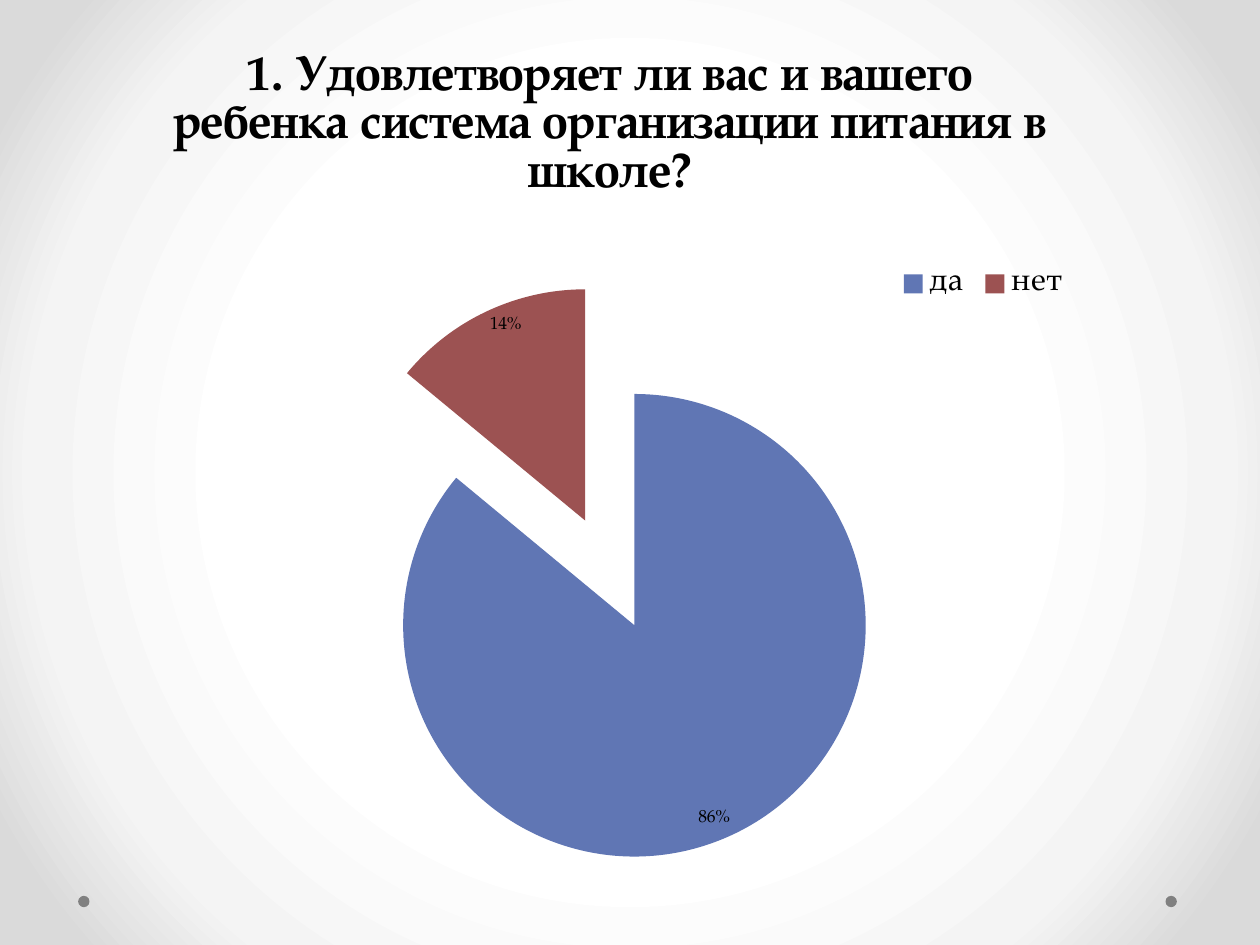
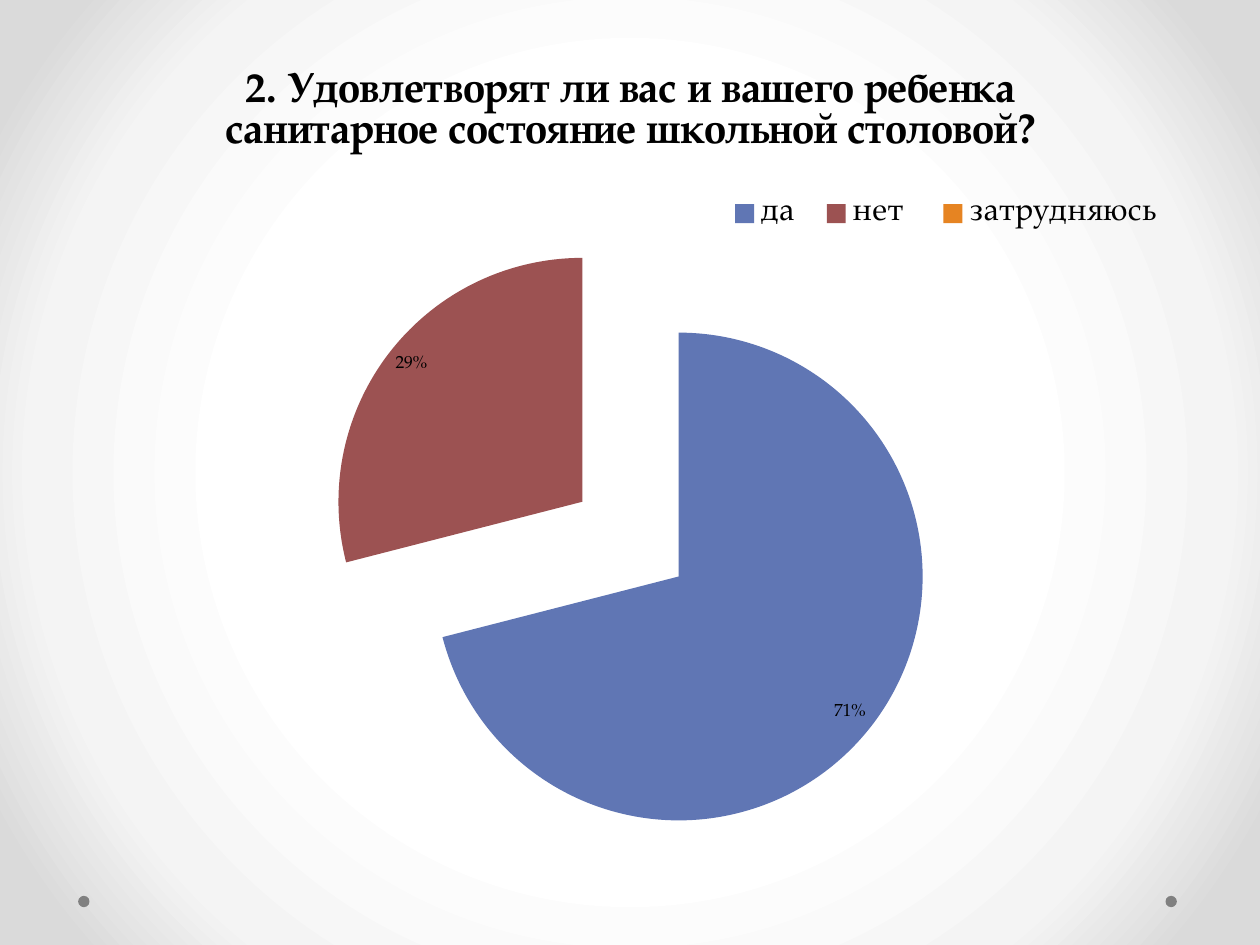
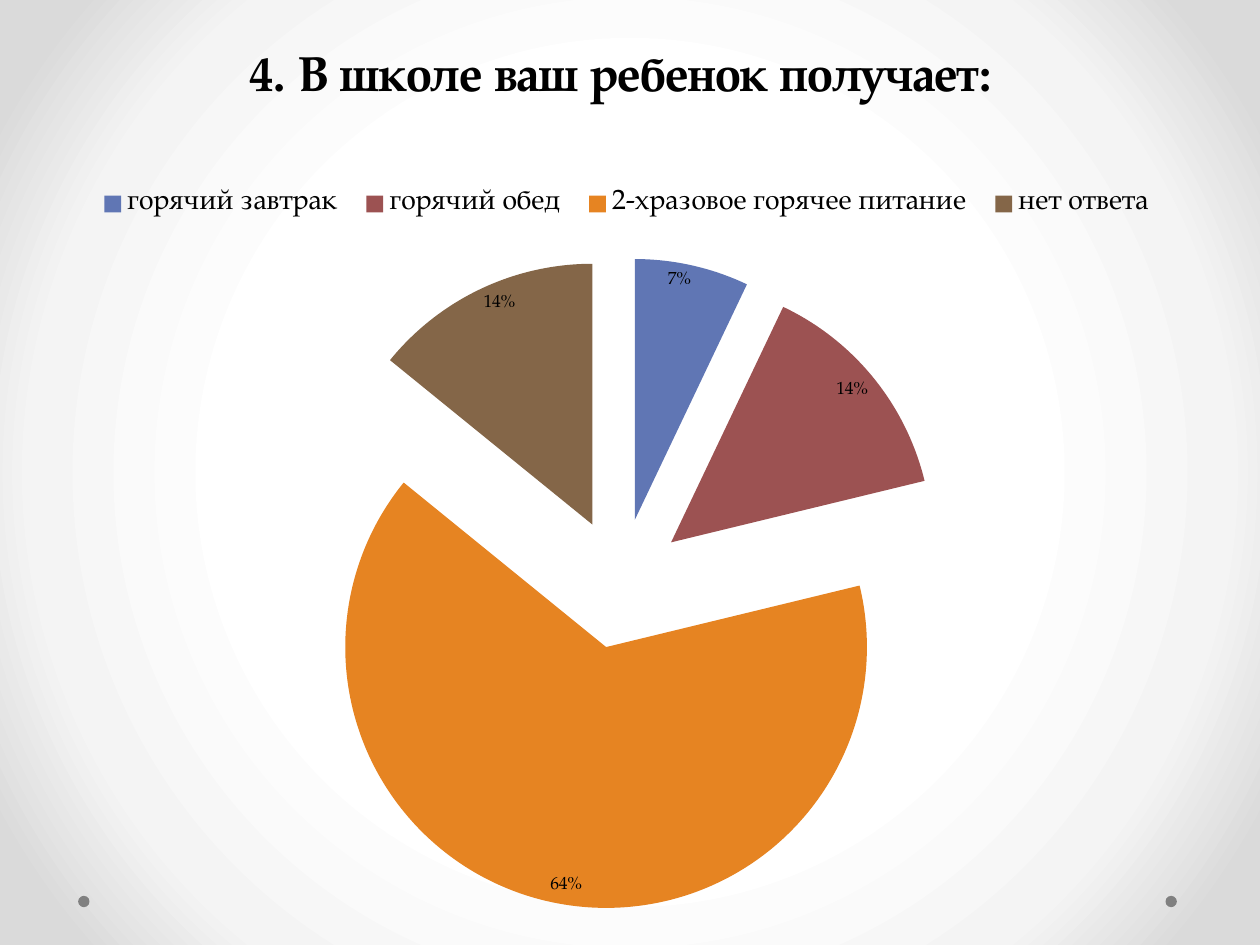
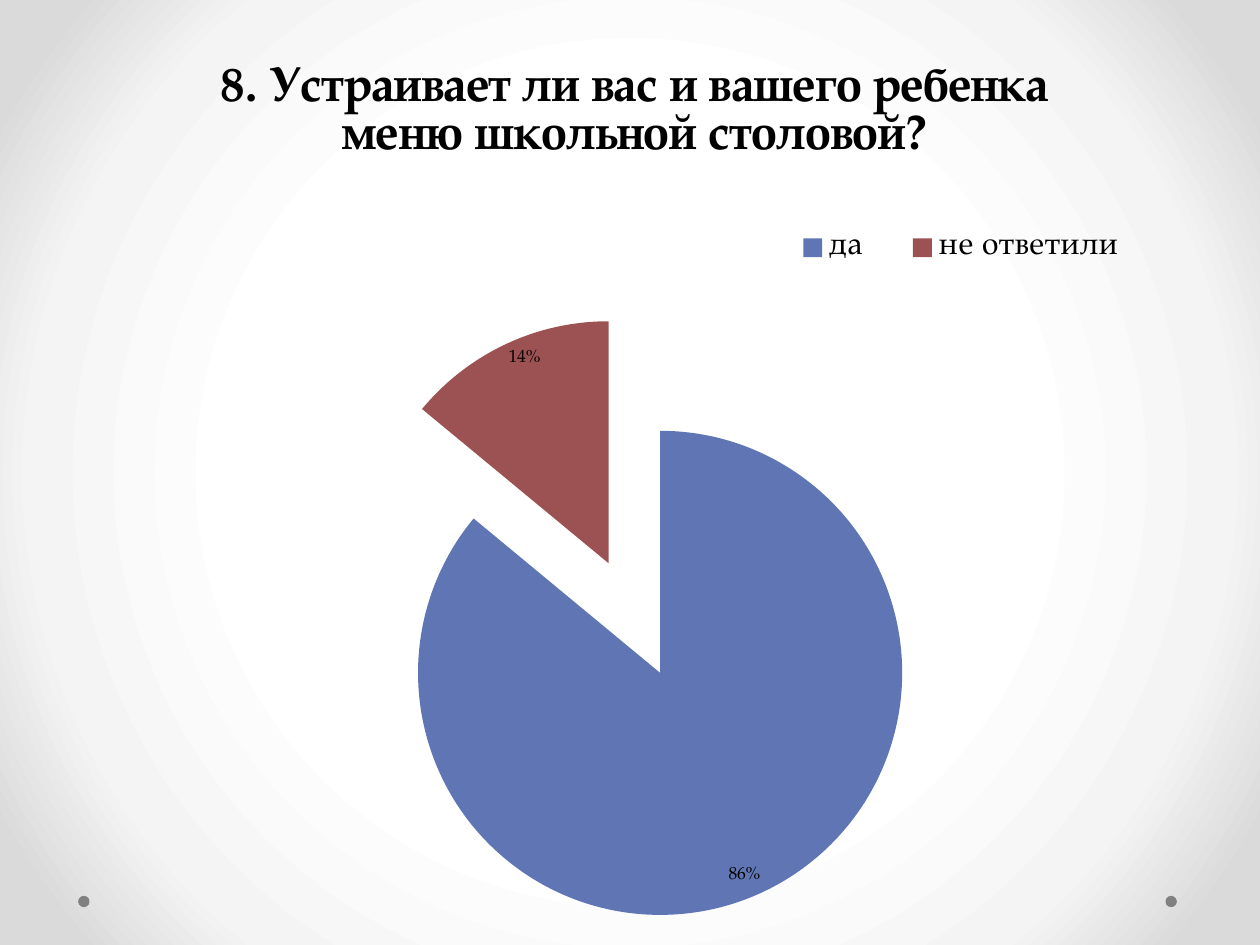
import pptx
import pptx.chart.data
import pptx.dml.color
import pptx.enum.chart
import pptx.enum.shapes
import pptx.oxml
import pptx.oxml.ns
import pptx.util

FONT = "TeX Gyre Pagella"
COLUMNS, ROWS = 100, 75
BLACK, DOT_GREY = "000000", "808080"
ANSWER_COLORS = ["6076B4", "9C5252", "E68422", "846648"]
BACKDROP_STOPS = [(50, "FFFFFF"), (76, "F4F4F4"), (92, "DADADA")]
DOT_COLUMNS, DOT_ROW, DOT_SIZE = (92.5, 6.2), 71.1, 0.9

SURVEY = [
    dict(question="1. Удовлетворяет ли вас и вашего ребенка система организации питания в школе?",
         answers={"да": 86, "нет": 14},
         frame=(3.5, 1.3, 89.8, 68.5),
         legend_area=(0.75, 0.28, 0.16, 0.06), pie_area=(0.08, 0.31, 0.84, 0.67)),
    dict(question="2. Удовлетворят ли вас и вашего ребенка санитарное состояние школьной столовой?",
         answers={"да": 71, "нет ": 29, "затрудняюсь": 0},
         frame=(2.8, 2.9, 94.5, 65.4), title_size=24,
         legend_area=(0.57, 0.18, 0.39, 0.07), pie_area=(0.08, 0.24, 0.84, 0.74)),
    dict(question="4. В школе ваш ребенок получает:",
         answers={"горячий завтрак": 7, "горячий обед": 14,
                  "2-хразовое горячее питание": 64, "нет ответа": 14},
         frame=(2, 1.3, 94.5, 70.9), legend_size=16,
         legend_area=(0.05, 0.18, 0.91, 0.06), pie_area=(0.08, 0.27, 0.84, 0.73)),
    dict(question="8. Устраивает ли вас и вашего ребенка меню школьной столовой?",
         answers={"да": 86, "не ответили ": 14},
         frame=(3.5, 2.1, 93.7, 71.7), series_name="Series 1",
         legend_area=(0.61, 0.21, 0.34, 0.07), pie_area=(0.08, 0.32, 0.84, 0.67)),
]


def color(hex_code):
    return pptx.dml.color.RGBColor.from_string(hex_code)


def grid(*cells):
    return [pptx.util.Inches(cell / 10) for cell in cells]


def format_font(font, size, bold=False, hex_code=BLACK):
    font.name = FONT
    font.size = pptx.util.Pt(size)
    font.bold = bold
    font.color.rgb = color(hex_code)


def write_text(frame, text, **font_format):
    frame.text = text
    format_font(frame.paragraphs[0].runs[0].font, **font_format)


def paint_backdrop(master):
    fill = master.background.fill
    fill.solid()
    stops = "".join(
        f'<a:gs pos="{share * 1000}"><a:srgbClr val="{hex_code}"/></a:gs>'
        for share, hex_code in BACKDROP_STOPS)
    gradient = pptx.oxml.parse_xml(
        f'<a:gradFill {pptx.oxml.ns.nsdecls("a")} rotWithShape="1"><a:gsLst>{stops}</a:gsLst>'
        '<a:path path="circle"><a:fillToRect l="50000" t="50000" r="50000" b="50000"/></a:path>'
        '</a:gradFill>')
    solid = master.element.find(".//" + pptx.oxml.ns.qn("p:bgPr")).find(
        pptx.oxml.ns.qn("a:solidFill"))
    solid.getparent().replace(solid, gradient)


def add_corner_dots(slide):
    for column in DOT_COLUMNS:
        dot = slide.shapes.add_shape(pptx.enum.shapes.MSO_SHAPE.OVAL,
                                     *grid(column, DOT_ROW, DOT_SIZE, DOT_SIZE))
        dot.shadow.inherit = False
        dot.fill.solid()
        dot.fill.fore_color.rgb = color(DOT_GREY)
        dot.line.fill.background()


def manual_layout(area, target=""):
    modes = '<c:xMode val="edge"/><c:yMode val="edge"/>'
    sizes = "".join(f'<c:{key} val="{share}"/>' for key, share in zip("xywh", area))
    return pptx.oxml.parse_xml(
        f'<c:layout {pptx.oxml.ns.nsdecls("c")}><c:manualLayout>'
        f'{target}{modes}{sizes}</c:manualLayout></c:layout>')


def place_pie(chart, area):
    plot_area = chart.element.find(".//" + pptx.oxml.ns.qn("c:plotArea"))
    for automatic in plot_area.findall(pptx.oxml.ns.qn("c:layout")):
        plot_area.remove(automatic)
    plot_area.insert(0, manual_layout(area, '<c:layoutTarget val="inner"/>'))


def place_legend(chart, area, size):
    chart.has_legend = True
    legend = chart.legend
    legend.position = pptx.enum.chart.XL_LEGEND_POSITION.TOP
    legend.include_in_layout = False
    format_font(legend.font, size)
    element = chart.element.find(".//" + pptx.oxml.ns.qn("c:legend"))
    for automatic in element.findall(pptx.oxml.ns.qn("c:layout")):
        element.remove(automatic)
    element.find(pptx.oxml.ns.qn("c:legendPos")).addnext(manual_layout(area))


def color_slices(series, count):
    explosion = pptx.oxml.parse_xml(
        f'<c:explosion {pptx.oxml.ns.nsdecls("c")} val="25"/>')
    series._element.find(pptx.oxml.ns.qn("c:tx")).addnext(explosion)
    for index, hex_code in enumerate(ANSWER_COLORS[:count]):
        fill = series.points[index].format.fill
        fill.solid()
        fill.fore_color.rgb = color(hex_code)


def label_slices(plot, answers):
    plot.has_data_labels = True
    labels = plot.data_labels
    complete = sum(answers.values()) == 100
    labels.show_percentage = complete
    labels.show_value = not complete
    labels.number_format = "0%" if complete else '0"%"'
    labels.number_format_is_linked = False
    labels.position = pptx.enum.chart.XL_LABEL_POSITION.INSIDE_END
    format_font(labels.font, 10)


def add_answer_pie(slide, question, answers, frame, legend_area, pie_area,
                   title_size=28, legend_size=18, series_name=None):
    data = pptx.chart.data.CategoryChartData()
    data.categories = list(answers)
    data.add_series(series_name or question, list(answers.values()))
    chart = slide.shapes.add_chart(pptx.enum.chart.XL_CHART_TYPE.PIE,
                                   *grid(*frame), data).chart
    format_font(chart.font, 10)
    chart.has_title = True
    write_text(chart.chart_title.text_frame, question, size=title_size, bold=True)
    chart.chart_title.include_in_layout = False
    plot = chart.plots[0]
    plot.vary_by_categories = True
    color_slices(plot.series[0], len(answers))
    label_slices(plot, answers)
    place_legend(chart, legend_area, legend_size)
    place_pie(chart, pie_area)


def main():
    deck = pptx.Presentation()
    deck.slide_width, deck.slide_height = grid(COLUMNS, ROWS)
    paint_backdrop(deck.slide_master)
    blank = deck.slide_layouts[6]
    for survey_item in SURVEY:
        slide = deck.slides.add_slide(blank)
        add_corner_dots(slide)
        add_answer_pie(slide, **survey_item)
    deck.save("out.pptx")


if __name__ == "__main__":
    main()
